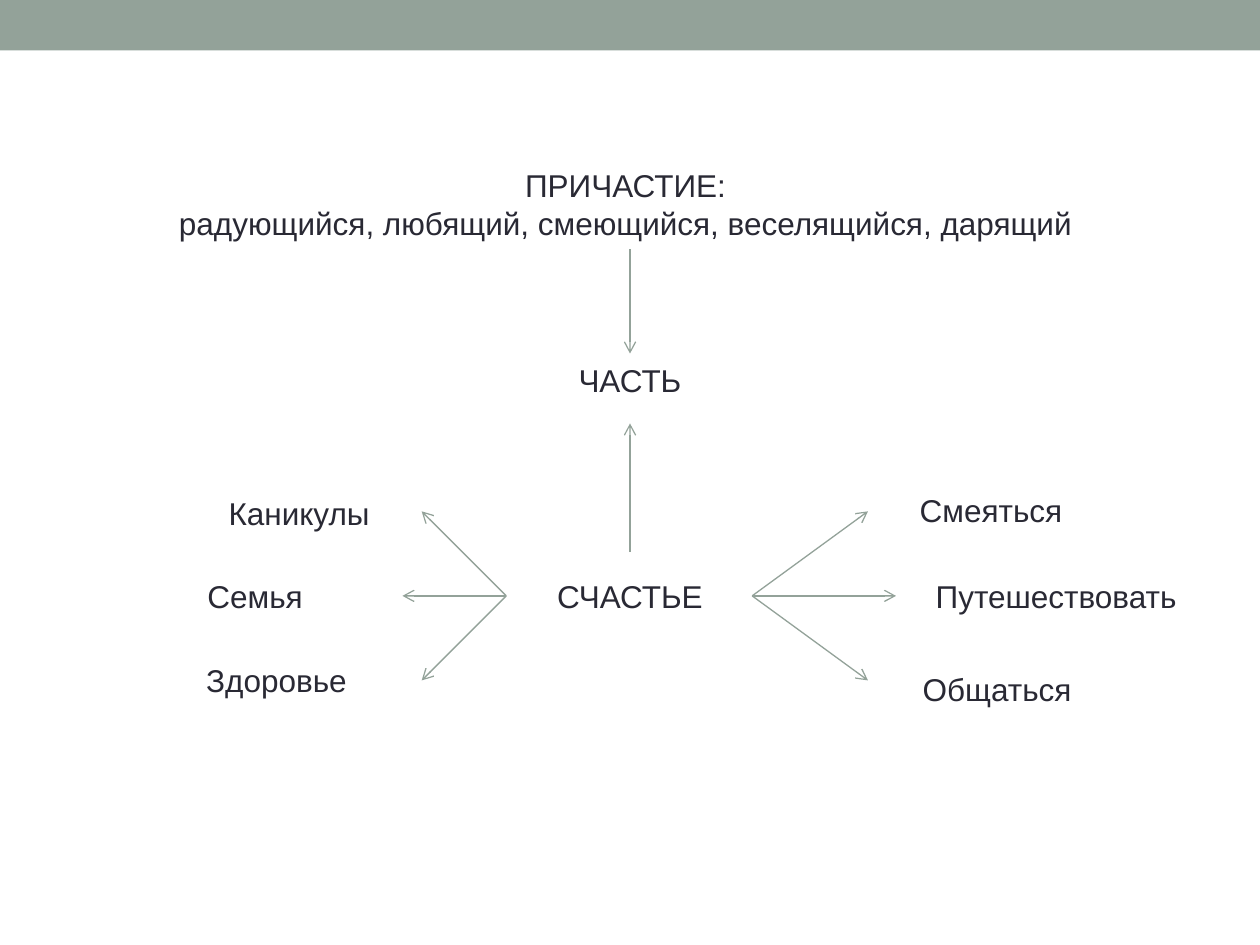
"""Draw a word map that links happiness, its part and its related words."""
import pptx
import pptx.util
import pptx.dml.color
import pptx.enum.shapes
import pptx.enum.text
import pptx.oxml
import pptx.oxml.ns

Pt = pptx.util.Pt


def color(code):
    return pptx.dml.color.RGBColor.from_string(code)


class Map:
    font = "Arial"
    size = 18
    ink = "292934"
    tint = "93A299"

    def __init__(self, slide):
        self.slide = slide

    def bar(self, x, y, w, h):
        kind = pptx.enum.shapes.MSO_SHAPE.RECTANGLE
        shape = self.slide.shapes.add_shape(kind, Pt(x), Pt(y), Pt(w), Pt(h))
        shape.shadow.inherit = False
        shape.fill.solid()
        shape.fill.fore_color.rgb = color(self.tint)
        shape.line.fill.background()

    def label(self, text, x, y, w, h=29):
        box = self.slide.shapes.add_textbox(Pt(x), Pt(y), Pt(w), Pt(h))
        frame = box.text_frame
        frame.word_wrap = True
        frame.text = text
        for para in frame.paragraphs:
            para.alignment = pptx.enum.text.PP_ALIGN.CENTER
            for run in para.runs:
                run.font.name = self.font
                run.font.size = Pt(self.size)
                run.font.color.rgb = color(self.ink)

    def arrow(self, start, end, shapes=None):
        shapes = shapes or self.slide.shapes
        kind = pptx.enum.shapes.MSO_CONNECTOR.STRAIGHT
        line = shapes.add_connector(kind, *(Pt(v) for v in (*start, *end)))
        line.line.color.rgb = color(self.tint)
        line.line.width = Pt(0.75)
        tail = pptx.oxml.parse_xml(
            f'<a:tailEnd {pptx.oxml.ns.nsdecls("a")} type="arrow"/>')
        line.line._get_or_add_ln().append(tail)
        blank = pptx.oxml.parse_xml(
            f'<a:effectLst {pptx.oxml.ns.nsdecls("a")}/>')
        line._element.spPr.append(blank)

    def fan(self, hub, tips):
        group = self.slide.shapes.add_group_shape()
        for tip in tips:
            self.arrow(hub, tip, group.shapes)


def main():
    deck = pptx.Presentation()
    deck.slide_width, deck.slide_height = Pt(720), Pt(540)
    page = Map(deck.slides.add_slide(deck.slide_layouts[6]))
    mid, row, step = 360, 340.5, 48.3

    page.bar(0, 0, 720, 28.8)
    page.label("ПРИЧАСТИЕ: \nрадующийся, любящий, смеющийся, веселящийся, дарящий ",
               88, 91.5, 544, 51)
    page.arrow((mid, 142.5), (mid, 202))
    page.label("ЧАСТЬ", 297.5, 202.5, 125)
    page.arrow((mid, 315.5), (mid, 242))
    page.label("СЧАСТЬЕ", 289, 326, 142)

    for hub, near, far in ((289.3, 241, 230), (429.8, 496, 512)):
        tips = [(near, row - step), (far, row), (near, row + step)]
        page.fan((hub, row), tips)

    words = (
        ("Каникулы", 114.5, 278.7, 113),
        ("Семья", 89.3, 326, 113),
        ("Здоровье", 101.5, 374.3, 113),
        ("Смеяться", 509.8, 277.2, 113),
        ("Путешествовать", 518.5, 326, 170),
        ("Общаться", 513.3, 379.4, 113),
    )
    for word in words:
        page.label(*word)
    deck.save("out.pptx")


if __name__ == "__main__":
    main()
